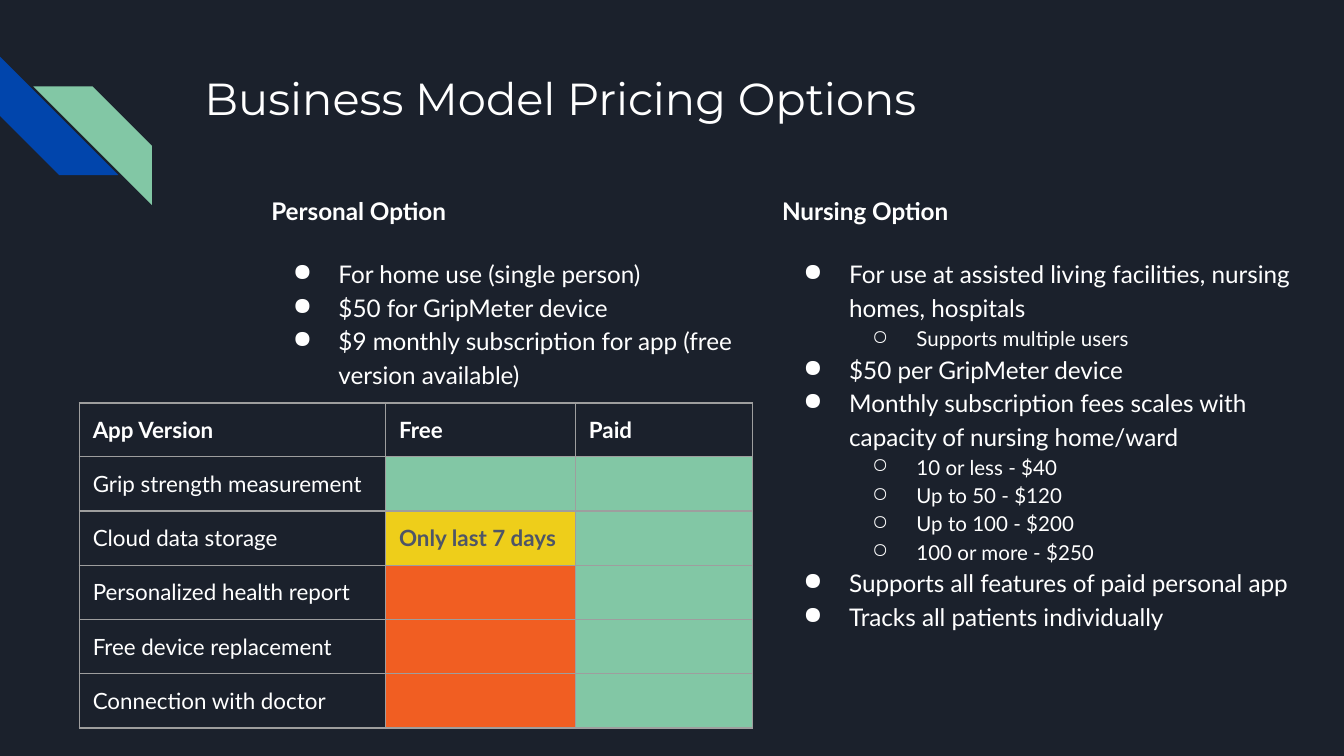
from dataclasses import dataclass

from lxml import etree
from pptx import Presentation, util as u
from pptx.dml.color import RGBColor
from pptx.enum import shapes, text
from pptx.oxml.ns import qn


@dataclass(frozen=True)
class Theme:
    """Colours, fonts and type sizes of the deck."""
    ground: str = "1B212C"
    white: str = "FFFFFF"
    slate: str = "4E5567"
    rule: str = "9E9E9E"
    blue: str = "0145AC"
    green: str = "82C7A5"
    yellow: str = "EECE1A"
    orange: str = "F15E22"
    head_font: str = "Montserrat"
    body_font: str = "Lato"
    title: int = 24
    body: int = 13
    cell: int = 12
    detail: int = 11


T = Theme()
WIDTH, HEIGHT = u.Inches(10), u.Inches(5.625)
PAD = u.Inches(0.1)

PERSONAL = ("Personal Option", [
    (0, "For home use (single person)"),
    (0, "$50 for GripMeter device"),
    (0, "$9 monthly subscription for app (free version available)"),
])
NURSING = ("Nursing Option", [
    (0, "For use at assisted living facilities, nursing homes, hospitals"),
    (1, "Supports multiple users"),
    (0, "$50 per GripMeter device"),
    (0, "Monthly subscription fees scales with capacity of nursing home/ward"),
    (1, "10 or less - $40"),
    (1, "Up to 50 - $120"),
    (1, "Up to 100 - $200"),
    (1, "100 or more - $250"),
    (0, "Supports all features of paid personal app"),
    (0, "Tracks all patients individually"),
])
HEADINGS = ["App Version", "Free", "Paid"]
FEATURES = [
    ("Grip strength measurement", "", T.green),
    ("Cloud data storage", "Only last 7 days", T.yellow),
    ("Personalized health report", "", T.orange),
    ("Free device replacement", "", T.orange),
    ("Connection with doctor", "", T.orange),
]
COLUMN_SHARES = [0.455, 0.282, 0.263]


def region(x, y, w, h):
    """Turn percentages of the slide into a box of lengths."""
    return (int(WIDTH * x / 100), int(HEIGHT * y / 100),
            int(WIDTH * w / 100), int(HEIGHT * h / 100))


def rgb(value):
    """Return a colour from its hex value."""
    return RGBColor.from_string(value)


def add_run(p, words, size, font=T.body_font, color=T.white, bold=False):
    """Add one formatted run to a paragraph."""
    r = p.add_run()
    r.text = words
    r.font.size, r.font.name, r.font.bold = u.Pt(size), font, bold
    r.font.color.rgb = rgb(color)


def set_frame(tf):
    """Give a text frame even margins, wrapping and top alignment."""
    tf.margin_left = tf.margin_right = tf.margin_top = tf.margin_bottom = PAD
    tf.word_wrap = True
    tf.auto_size = text.MSO_AUTO_SIZE.NONE
    tf.vertical_anchor = text.MSO_ANCHOR.TOP


def set_bullet(p, level):
    """Indent a paragraph and mark it with the bullet of its level."""
    p.level = level
    pPr = p._p.get_or_add_pPr()
    pPr.set("marL", str(u.Inches(0.5 * (level + 1))))
    pPr.set("indent", str(-u.Inches(0.34 - 0.01 * level)))
    color = etree.SubElement(pPr, qn("a:buClr"))
    etree.SubElement(color, qn("a:srgbClr"), val=T.white)
    etree.SubElement(pPr, qn("a:buChar"), char="●○"[level])


def set_borders(cell):
    """Draw a thin rule on every side of a cell."""
    tcPr = cell._tc.get_or_add_tcPr()
    for side in "LRTB":
        ln = etree.SubElement(tcPr, qn(f"a:ln{side}"), w=str(u.Pt(0.75)))
        fill = etree.SubElement(ln, qn("a:solidFill"))
        etree.SubElement(fill, qn("a:srgbClr"), val=T.rule)


def add_stripes(s, box):
    """Place the two interlocking corner stripes."""
    x, y, w, h = box
    side = int(w * 0.78)
    for left, top, turn, color in [(x, y, 270, T.blue),
                                   (x + w - side, y + h - side, 90, T.green)]:
        sp = s.shapes.add_shape(shapes.MSO_SHAPE.DIAGONAL_STRIPE, left, top, side, side)
        sp.adjustments[0] = 0.5
        sp.rotation = turn
        sp.shadow.inherit = False
        sp.fill.solid()
        sp.fill.fore_color.rgb = rgb(color)
        sp.line.fill.background()


def add_title(s, box, words):
    """Move and format the title placeholder."""
    sp = s.shapes.title
    sp.left, sp.top, sp.width, sp.height = box
    set_frame(sp.text_frame)
    p = sp.text_frame.paragraphs[0]
    p.alignment = text.PP_ALIGN.LEFT
    add_run(p, words, T.title, T.head_font)


def add_option(s, box, heading, items):
    """Place a bold heading with its two-level bullet list."""
    tf = s.shapes.add_textbox(*box).text_frame
    set_frame(tf)
    p = tf.paragraphs[0]
    p.line_spacing = 1.15
    add_run(p, heading, T.body, bold=True)
    for i, (level, words) in enumerate(items):
        p = tf.add_paragraph()
        p.line_spacing = 1.15
        p.space_before = u.Pt(0 if i else 16)
        set_bullet(p, level)
        add_run(p, words, T.detail if level else T.body)


def fill_cell(cell, words, fill=None, color=T.white, bold=False):
    """Write, fill and rule one table cell."""
    cell.margin_left = cell.margin_right = cell.margin_top = cell.margin_bottom = PAD
    set_borders(cell)
    if fill:
        cell.fill.solid()
        cell.fill.fore_color.rgb = rgb(fill)
    else:
        cell.fill.background()
    p = cell.text_frame.paragraphs[0]
    if words:
        add_run(p, words, T.cell, color=color, bold=bold)
    else:
        etree.SubElement(p._p, qn("a:endParaRPr"), sz=str(T.cell * 100))


def add_versions(s, box):
    """Place the table comparing the free and paid app."""
    rows = len(FEATURES) + 1
    table = s.shapes.add_table(rows, len(HEADINGS), *box).table
    table.first_row = table.horz_banding = False
    for column, share in zip(table.columns, COLUMN_SHARES):
        column.width = int(box[2] * share)
    for row in table.rows:
        row.height = box[3] // rows
    for i, heading in enumerate(HEADINGS):
        fill_cell(table.cell(0, i), heading, bold=True)
    for i, (feature, note, free) in enumerate(FEATURES, 1):
        fill_cell(table.cell(i, 0), feature)
        fill_cell(table.cell(i, 1), note, free, T.slate, True)
        fill_cell(table.cell(i, 2), "", T.green)


def main():
    """Build the pricing slide."""
    prs = Presentation()
    prs.slide_width, prs.slide_height = WIDTH, HEIGHT
    s = prs.slides.add_slide(prs.slide_layouts[5])
    s.background.fill.solid()
    s.background.fill.fore_color.rgb = rgb(T.ground)
    add_stripes(s, region(0, 7.5, 11.3, 19.6))
    add_versions(s, region(5.9, 53.3, 50.1, 42.7))
    add_title(s, region(14.2, 7.6, 77, 9.8), "Business Model Pricing Options")
    add_option(s, region(19.2, 23.6, 36.8, 63.5), *PERSONAL)
    add_option(s, region(57.2, 23.6, 40.1, 63.5), *NURSING)
    prs.save("out.pptx")


if __name__ == "__main__":
    main()
